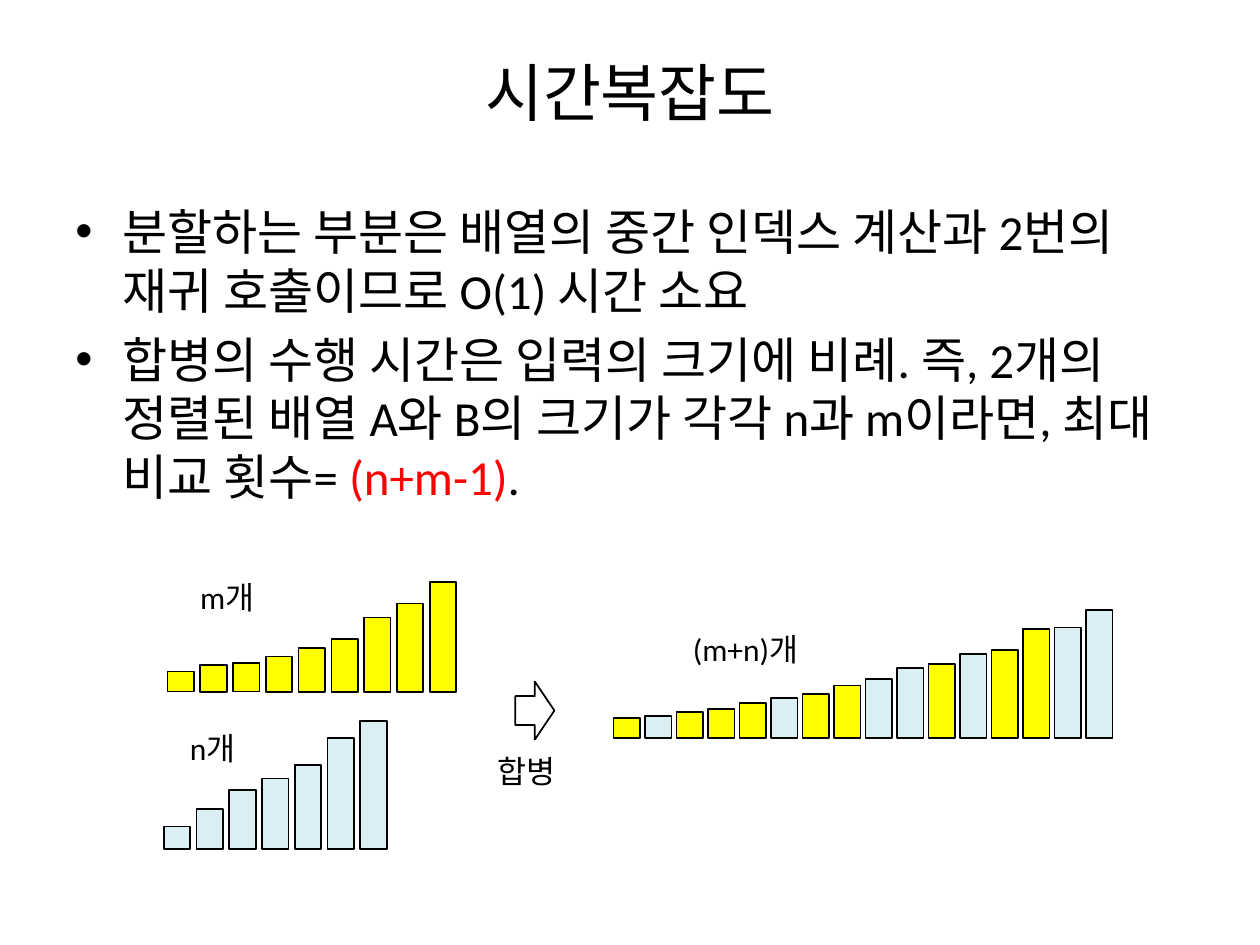
from lxml.etree import SubElement
from pptx import Presentation
from pptx.dml.color import RGBColor
from pptx.enum.shapes import MSO_SHAPE
from pptx.enum.text import MSO_ANCHOR, PP_ALIGN
from pptx.oxml.ns import qn
from pptx.util import Inches, Pt

BLACK, RED, YELLOW, PALE_BLUE = "000000", "FF0000", "FFFF00", "DBEEF4"
color = RGBColor.from_string

deck = Presentation()
deck.slide_width, deck.slide_height = Inches(10), Inches(7.5)
slide = deck.slides.add_slide(deck.slide_layouts[6])


def cells(*counts):
    """Turn counts of grid cells (100 columns by 75 rows) into lengths."""
    return [round(count * deck.slide_width / 100) for count in counts]


def write(paragraphs, area, size=18, align=PP_ALIGN.LEFT,
          anchor=MSO_ANCHOR.TOP, bullet=None):
    """Each paragraph is a list of (text, colour) runs."""
    frame = slide.shapes.add_textbox(*cells(*area)).text_frame
    frame.word_wrap = True
    frame.vertical_anchor = anchor
    for index, runs in enumerate(paragraphs):
        paragraph = frame.add_paragraph() if index else frame.paragraphs[0]
        paragraph.alignment = align
        if bullet:
            indent, = cells(3.75)
            paragraph.space_before = Pt(size * 0.2)
            props = paragraph._p.get_or_add_pPr()
            props.set("marL", str(indent))
            props.set("indent", str(-indent))
            SubElement(props, qn("a:buFont"), typeface="Arial")
            SubElement(props, qn("a:buChar"), char=bullet)
        for text, hue in runs:
            run = paragraph.add_run()
            run.text = text
            run.font.name = "Calibri"
            run.font.size = Pt(size)
            run.font.color.rgb = color(hue)


write([[("시간복잡도", BLACK)]], (5, 3, 90, 8.5), size=36,
      align=PP_ALIGN.CENTER, anchor=MSO_ANCHOR.MIDDLE)
write([
    [("분할하는 부분은 배열의 중간 인덱스 계산과 2번의 재귀 호출이므로 O(1) 시간 소요", BLACK)],
    [("합병의 수행 시간은 입력의 크기에 비례. 즉, 2개의 정렬된 배열 A와 B의 크기가 "
      "각각 n과 m이라면, 최대 비교 횟수= ", BLACK),
     ("(n+m-1)", RED), (".", BLACK)],
], (5, 15.5, 90, 27.9), size=28, bullet="•")

# Two sorted arrays and the result of merging them, as (bar height, fill)
n_array = [(h, PALE_BLUE) for h in (1.8, 3.2, 4.7, 5.6, 6.7, 8.8, 10.2)]
m_array = [(h, YELLOW) for h in (1.6, 2.1, 2.3, 2.8, 3.5, 4.2, 5.9, 7, 8.7)]
merged = sorted(n_array + m_array)

outlined = []
for array, left, baseline, pitch in (
        (n_array, 13, 67.4, 2.6),
        (m_array, 13.3, 54.9, 2.6),
        (merged, 48.7, 58.6, 2.5)):
    for position, (height, fill) in enumerate(array):
        bar = slide.shapes.add_shape(MSO_SHAPE.RECTANGLE, *cells(
            left + position * pitch, baseline - height, 2.1, height))
        bar.fill.solid()
        bar.fill.fore_color.rgb = color(fill)
        outlined.append(bar)

merge_arrow = slide.shapes.add_shape(
    MSO_SHAPE.RIGHT_ARROW, *cells(40.9, 54.1, 3.1, 4.6))
merge_arrow.fill.background()
outlined.append(merge_arrow)

for shape in outlined:
    shape.shadow.inherit = False
    shape.line.color.rgb = color(BLACK)
    shape.line.width = Pt(1)

for label, left, top, width in (
        ("합병", 38.5, 59.2, 7.9),
        ("m개", 14.9, 45.4, 8.6),
        ("n개", 14.1, 57.4, 8.6),
        ("(m+n)개", 54, 49.5, 14.4)):
    write([[(label, BLACK)]], (left, top, width, 4))

deck.save("out.pptx")
